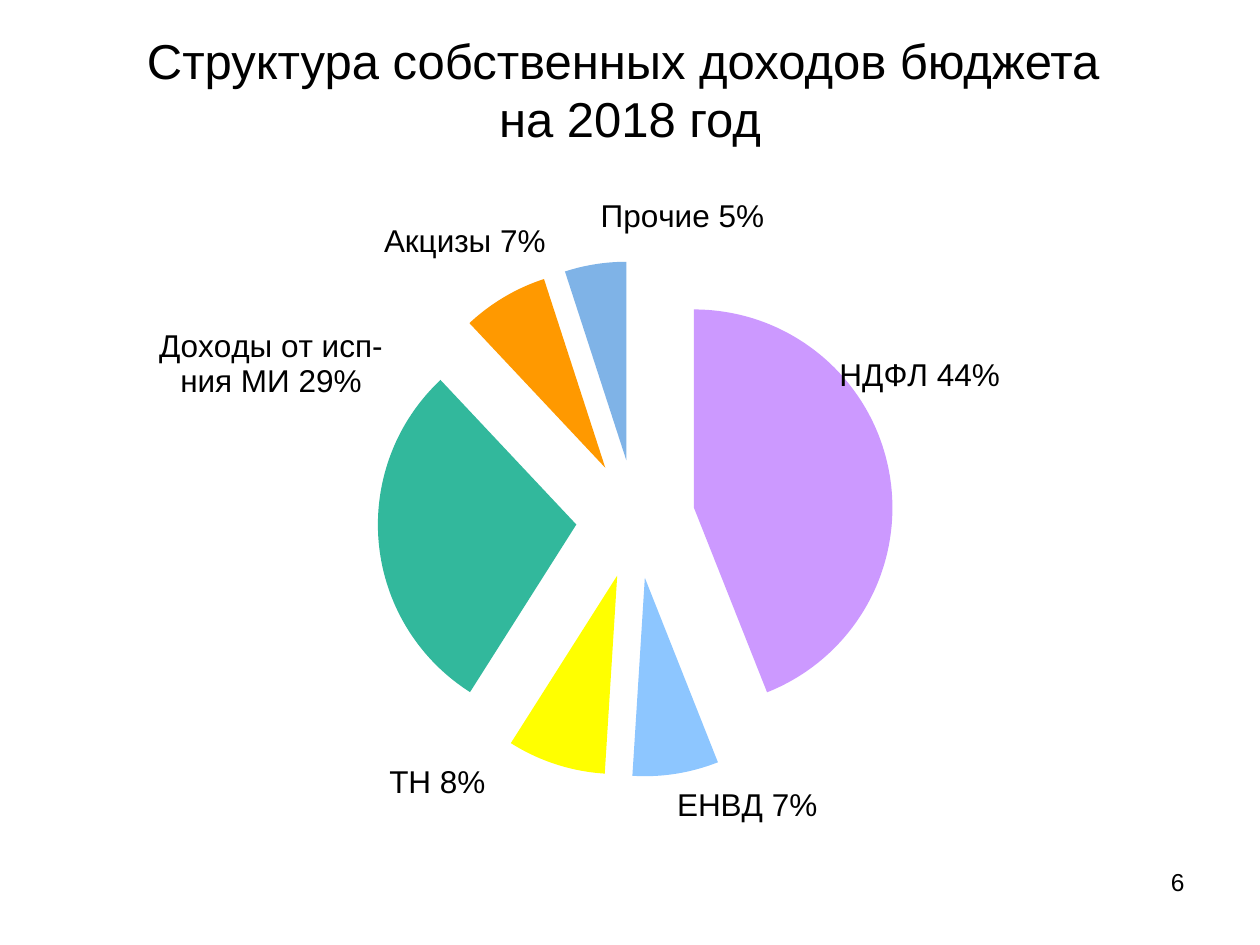
from dataclasses import dataclass

from pptx import Presentation
from pptx import oxml
from pptx.chart import data as chart_data
from pptx.dml.color import RGBColor
from pptx.enum import chart as chart_enum, text
from pptx.oxml import ns
from pptx.util import Inches, Pt

BLACK = RGBColor(0x00, 0x00, 0x00)
WHITE = RGBColor(0xFF, 0xFF, 0xFF)
VIOLET = RGBColor(0xCC, 0x99, 0xFF)
SKY = RGBColor(0x8D, 0xC6, 0xFF)
YELLOW = RGBColor(0xFF, 0xFF, 0x00)
TEAL = RGBColor(0x32, 0xB8, 0x9C)
ORANGE = RGBColor(0xFF, 0x99, 0x00)
BLUE = RGBColor(0x7F, 0xB3, 0xE7)
FONT = "Arial"
EXPLOSION = 30


@dataclass
class Income:
    name: str
    percent: int
    color: RGBColor
    label_dx: float  # label shift, as a share of the chart size
    label_dy: float


@dataclass
class TextBlock:
    lines: list[str]
    box: tuple[float, float, float, float]
    size: int
    align: text.PP_ALIGN
    anchor: text.MSO_ANCHOR


INCOMES = [
    Income("НДФЛ", 44, VIOLET, -0.05, -0.12),
    Income("ЕНВД", 7, SKY, 0, 0.01),
    Income("ТН", 8, YELLOW, -0.06, -0.01),
    Income("Доходы от исп-ния МИ", 29, TEAL, 0.01, -0.34),
    Income("Акцизы", 7, ORANGE, 0.04, -0.05),
    Income("Прочие", 5, BLUE, 0.15, -0.04),
]
TEXTS = [
    TextBlock(["Структура собственных доходов бюджета ", "на 2018 год"],
              (0.5, 0.33, 9, 0.75), 28, text.PP_ALIGN.CENTER, text.MSO_ANCHOR.MIDDLE),
    TextBlock(["6"], (7.17, 6.83, 2.33, 0.52), 14,
              text.PP_ALIGN.RIGHT, text.MSO_ANCHOR.TOP),
]


def add_text(slide, block: TextBlock) -> None:
    shape = slide.shapes.add_textbox(*map(Inches, block.box))
    frame = shape.text_frame
    frame.word_wrap = True
    frame.vertical_anchor = block.anchor
    paragraph = frame.paragraphs[0]
    paragraph.alignment = block.align
    for index, line in enumerate(block.lines):
        if index:
            paragraph.add_line_break()
        run = paragraph.add_run()
        run.text = line
        run.font.name = FONT
        run.font.size = Pt(block.size)
        run.font.color.rgb = BLACK


def labels_xml(incomes: list[Income]) -> str:
    """Category and percent labels, each with its own shift."""
    shown = ('<c:dLblPos val="outEnd"/><c:showLegendKey val="0"/><c:showVal val="0"/>'
             '<c:showCatName val="1"/><c:showSerName val="0"/><c:showPercent val="1"/>'
             '<c:showBubbleSize val="0"/><c:separator> </c:separator>')
    points = "".join(
        f'<c:dLbl><c:idx val="{index}"/><c:layout><c:manualLayout>'
        f'<c:x val="{income.label_dx}"/><c:y val="{income.label_dy}"/>'
        f'</c:manualLayout></c:layout>{shown}</c:dLbl>'
        for index, income in enumerate(incomes))
    return (f'<c:dLbls {ns.nsdecls("c")}>{points}'
            f'<c:numFmt formatCode="0%" sourceLinked="0"/>{shown}'
            '<c:showLeaderLines val="0"/></c:dLbls>')


def add_income_chart(slide, incomes: list[Income]) -> None:
    data = chart_data.CategoryChartData()
    data.categories = [income.name for income in incomes]
    data.add_series("Series 1", [income.percent for income in incomes])
    chart = slide.shapes.add_chart(
        chart_enum.XL_CHART_TYPE.PIE, Inches(0.5), Inches(1.58),
        Inches(9), Inches(5.03), data).chart
    chart.has_title = False
    chart.has_legend = False
    chart.font.name = FONT
    chart.font.size = Pt(18)
    chart.font.color.rgb = BLACK
    plot = chart.plots[0]
    plot.vary_by_categories = True
    series = plot.series[0]

    # Slices, pulled apart
    for index, income in enumerate(incomes):
        slice_format = series.points[index].format
        slice_format.fill.solid()
        slice_format.fill.fore_color.rgb = income.color
        slice_format.line.fill.background()
    for point in series._element.findall(ns.qn("c:dPt")):
        point.find(ns.qn("c:spPr")).addprevious(oxml.parse_xml(
            f'<c:explosion {ns.nsdecls("c")} val="{EXPLOSION}"/>'))

    # Labels
    series._element.find(ns.qn("c:cat")).addprevious(
        oxml.parse_xml(labels_xml(incomes)))

    # Plot area
    plot_area = chart._chartSpace.find(f'.//{ns.qn("c:plotArea")}')
    for layout in plot_area.findall(ns.qn("c:layout")):
        plot_area.remove(layout)
    plot_area.insert(0, oxml.parse_xml(
        f'<c:layout {ns.nsdecls("c")}><c:manualLayout><c:layoutTarget val="inner"/>'
        '<c:xMode val="edge"/><c:yMode val="edge"/><c:x val="0.33"/><c:y val="0.19"/>'
        '<c:w val="0.35"/><c:h val="0.63"/></c:manualLayout></c:layout>'))


def main() -> None:
    presentation = Presentation()
    presentation.slide_width = Inches(10)
    presentation.slide_height = Inches(7.5)
    slide = presentation.slides.add_slide(presentation.slide_layouts[6])
    slide.background.fill.solid()
    slide.background.fill.fore_color.rgb = WHITE

    # Title and page number
    for block in TEXTS:
        add_text(slide, block)

    # Income structure
    add_income_chart(slide, INCOMES)
    presentation.save("out.pptx")


if __name__ == "__main__":
    main()
